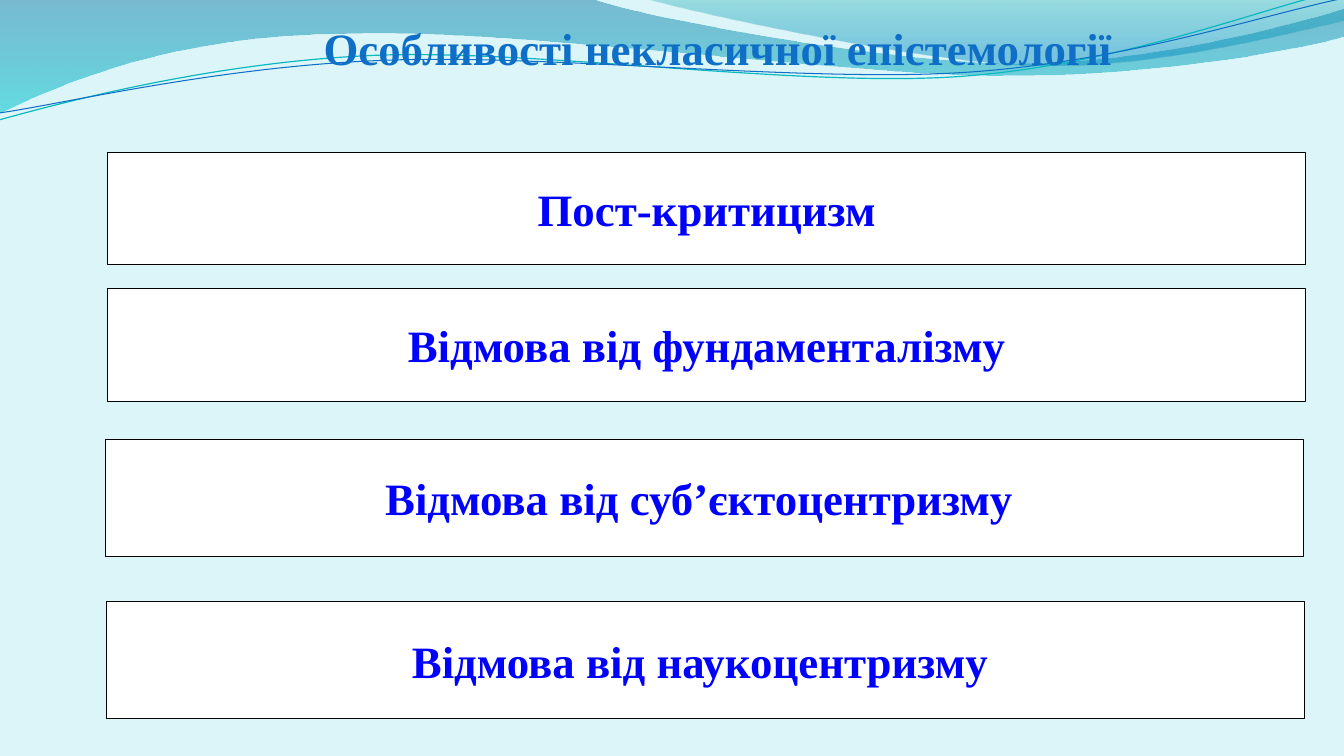
"""Builds the slide on the features of non-classical epistemology."""
from lxml import etree
from pptx import Presentation
from pptx.dml.color import RGBColor
from pptx.enum import shapes, text
from pptx.oxml import ns
from pptx.util import Inches, Pt

PALE = RGBColor(0xDB, 0xF5, 0xF9)
WHITE = RGBColor(0xFF, 0xFF, 0xFF)
BLACK = RGBColor(0, 0, 0)
BLUE = RGBColor(0, 0, 0xFF)
HEADING = RGBColor(0x0F, 0x6F, 0xC6)
TEAL = RGBColor(0x0A, 0xB8, 0xBF)
DEEP_BLUE = RGBColor(0, 0x74, 0xA1)
CYAN = RGBColor(0, 0xC6, 0xCF)
DARK_TEAL = RGBColor(0, 0xA1, 0xA9)
MID_BLUE = RGBColor(0, 0x8B, 0xBF)

FONT = {"name": "Times New Roman", "size": Pt(32), "bold": True}

BANDS = [
    ([(0, -0.01), (5.87, -0.01),
      (6.34, 0.17, 8.85, 0.63, 10.11, 0.63),
      (11.38, 0.63, 12.78, 0.26, 13.33, 0.09), (13.35, 0.36),
      (13.11, 0.44, 11.6, 0.76, 9.94, 0.75),
      (8.29, 0.75, 5.09, 0.28, 3.43, 0.34),
      (1.72, 0.35, 0.61, 0.83, -0.01, 1.13)],
     [(0, DEEP_BLUE, 45), (1, CYAN, 55)]),
    ([(6.39, -0.01),
      (6.79, 0.11, 9.09, 0.62, 10.25, 0.65),
      (11.41, 0.69, 12.82, 0.32, 13.33, 0.21), (13.33, 0)],
     [(0, DARK_TEAL, 30), (0.8, MID_BLUE, 45)]),
]
WAVES = [
    ([(-0.01, 1.19),
      (0.64, 1.01, 2.11, 0.62, 3.69, 0.55),
      (5.27, 0.48, 7.9, 0.87, 9.5, 0.76),
      (11.1, 0.65, 12.52, 0.08, 13.31, -0.1)], TEAL, 0.85),
    ([(0, 1.12),
      (0.63, 1.03, 2.18, 0.66, 3.78, 0.6),
      (5.37, 0.53, 7.96, 0.82, 9.55, 0.72),
      (11.15, 0.62, 12.55, 0.14, 13.34, -0.02)], HEADING, 0.75),
]
FEATURES = [
    ("Пост-критицизм", 1.07, 1.51, 1.11),
    ("Відмова від фундаменталізму", 1.07, 2.86, 1.12),
    ("Відмова від суб’єктоцентризму ", 1.05, 4.36, 1.16),
    ("Відмова від наукоцентризму ", 1.06, 5.97, 1.16),
]


def curve_segments(sp, segments):
    lines = list(sp._element.spPr.iter(ns.qn("a:lnTo")))
    for line, segment in zip(lines, segments):
        if len(segment) == 2:
            continue
        line.tag = ns.qn("a:cubicBezTo")
        controls = [segment[0:2], segment[2:4]]
        for index, (x, y) in enumerate(controls):
            pt = etree.Element(ns.qn("a:pt"), x=str(Inches(x) - sp.left),
                               y=str(Inches(y) - sp.top))
            line.insert(index, pt)


def add_outline(s, outline, close):
    points = [tuple(map(Inches, segment[-2:])) for segment in outline]
    builder = s.shapes.build_freeform(*points[0])
    builder.add_line_segments(points[1:], close=close)
    sp = builder.convert_to_shape()
    sp.shadow.inherit = False
    curve_segments(sp, outline[1:])
    s.slide_layout.slide_master.shapes._spTree.append(sp._element)
    return sp


def add_band(s, outline, stops):
    sp = add_outline(s, outline, True)
    sp.line.fill.background()
    sp.fill.gradient()
    sp.fill.gradient_angle = 270
    for stop, (position, color, _) in zip(sp.fill.gradient_stops, stops):
        stop.position = position
        stop.color.rgb = color
    colors = sp._element.spPr.iter(ns.qn("a:srgbClr"))
    for color, (_, _, opacity) in zip(colors, stops):
        etree.SubElement(color, ns.qn("a:alpha"), val=str(opacity * 1000))


def add_wave(s, outline, color, width):
    sp = add_outline(s, outline, False)
    sp.fill.background()
    sp.line.color.rgb = color
    sp.line.width = Pt(width)


def set_text(sp, words, color, anchor):
    tf = sp.text_frame
    tf.word_wrap = True
    tf.vertical_anchor = anchor
    p = tf.paragraphs[0]
    p.alignment = text.PP_ALIGN.CENTER
    r = p.add_run()
    r.text = words
    for key, value in FONT.items():
        setattr(r.font, key, value)
    r.font.color.rgb = color


def add_title(s, words):
    sp = s.shapes.title
    sp.left, sp.top, sp.width, sp.height = map(Inches, (1.49, 0.16, 11.26, 0.63))
    set_text(sp, words, HEADING, text.MSO_ANCHOR.TOP)
    sp.text_frame.auto_size = text.MSO_AUTO_SIZE.SHAPE_TO_FIT_TEXT


def add_feature(s, words, left, top, height):
    sp = s.shapes.add_shape(shapes.MSO_SHAPE.RECTANGLE, Inches(left), Inches(top),
                            Inches(11.88), Inches(height))
    sp.shadow.inherit = False
    sp.fill.solid()
    sp.fill.fore_color.rgb = WHITE
    sp.line.color.rgb = BLACK
    sp.line.width = Pt(0.75)
    set_text(sp, words, BLUE, text.MSO_ANCHOR.MIDDLE)


def main():
    prs = Presentation()
    prs.slide_width, prs.slide_height = Inches(13.33), Inches(7.5)
    s = prs.slides.add_slide(prs.slide_layouts[5])
    s.background.fill.solid()
    s.background.fill.fore_color.rgb = PALE
    for band in BANDS:
        add_band(s, *band)
    for wave in WAVES:
        add_wave(s, *wave)
    add_title(s, "Особливості некласичної епістемології")
    for feature in FEATURES:
        add_feature(s, *feature)
    prs.save("out.pptx")


if __name__ == "__main__":
    main()
